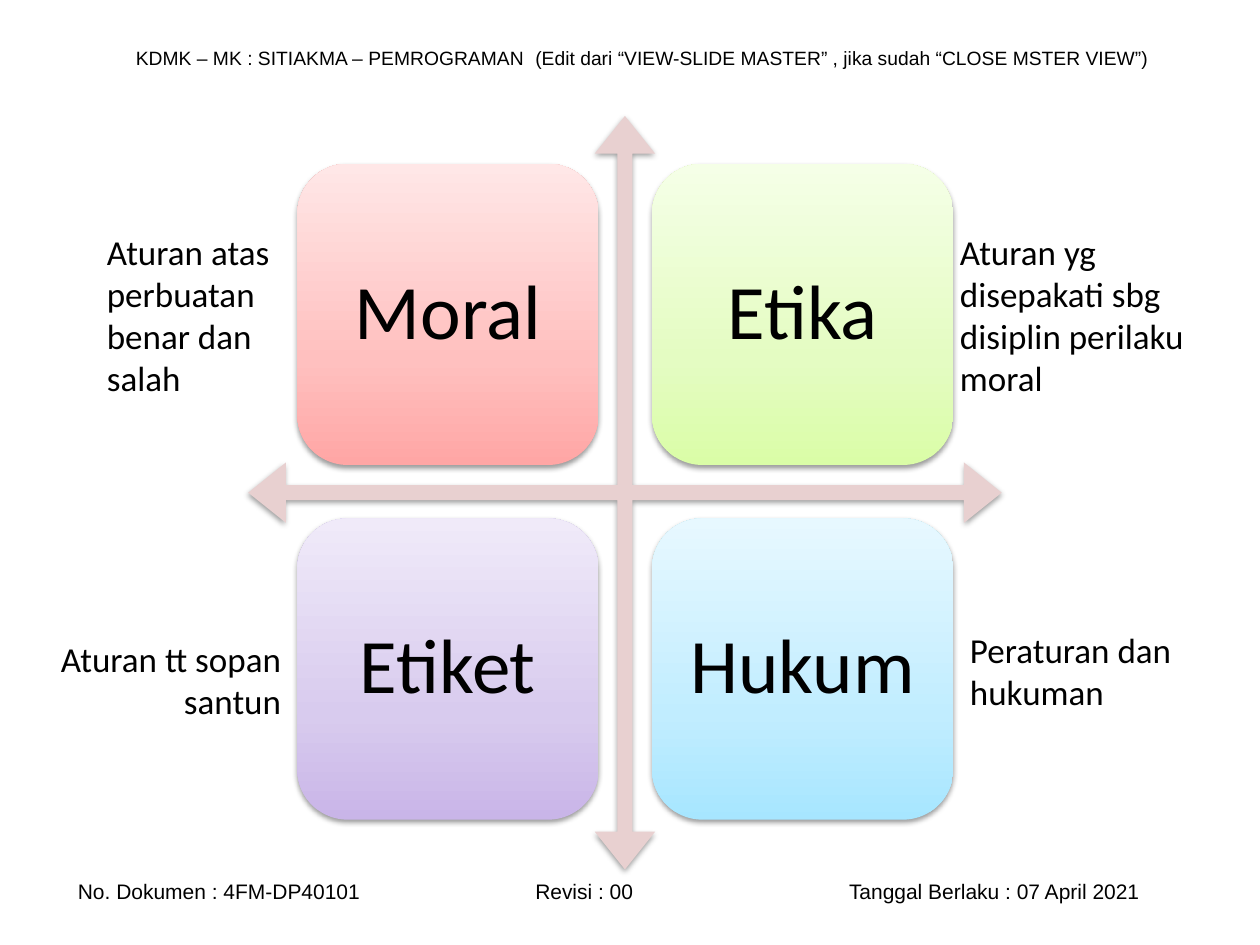
from lxml import etree
from pptx import Presentation
from pptx.dml.color import RGBColor
from pptx.enum.shapes import MSO_SHAPE
from pptx.enum.text import MSO_ANCHOR, PP_ALIGN
from pptx.oxml.ns import qn
from pptx.util import Inches, Pt

QUAD_ARROW, ROUNDED = MSO_SHAPE.QUAD_ARROW, MSO_SHAPE.ROUNDED_RECTANGLE
TOP, MIDDLE = MSO_ANCHOR.TOP, MSO_ANCHOR.MIDDLE
LEFT, CENTER, RIGHT = PP_ALIGN.LEFT, PP_ALIGN.CENTER, PP_ALIGN.RIGHT

BLACK = RGBColor(0x00, 0x00, 0x00)
ARROW_PINK = RGBColor(0xE8, 0xD0, 0xD0)
# Gradient stops of each card, from bottom to top
RED = [RGBColor(0xFF, 0xA6, 0xA5), RGBColor(0xFF, 0xC0, 0xBF), RGBColor(0xFF, 0xE7, 0xE7)]
GREEN = [RGBColor(0xDA, 0xFD, 0xA7), RGBColor(0xE4, 0xFC, 0xC2), RGBColor(0xF5, 0xFF, 0xE7)]
PURPLE = [RGBColor(0xC9, 0xB5, 0xE8), RGBColor(0xD8, 0xCB, 0xEE), RGBColor(0xF0, 0xEA, 0xF9)]
BLUE = [RGBColor(0xA7, 0xE6, 0xFF), RGBColor(0xC1, 0xED, 0xFF), RGBColor(0xE7, 0xF8, 0xFF)]
STOP_POSITIONS = (0, 35, 100)

CARD_SIZE = 2.39
CARD_LEFT, CARD_TOP = 2.36, 1.3
CARD_STEP = 2.815

CARDS = [("Moral", RED), ("Etika", GREEN), ("Etiket", PURPLE), ("Hukum", BLUE)]
NOTES = [
    ("Aturan atas perbuatan benar dan salah", (0.75, 1.78, 1.57, 1.45), LEFT),
    ("Aturan yg disepakati sbg disiplin perilaku moral", (7.52, 1.78, 2.13, 1.45), LEFT),
    ("Aturan tt sopan santun", (0.2, 5.01, 2.13, 0.77), RIGHT),
    ("Peraturan dan hukuman", (7.6, 4.94, 2.13, 0.77), LEFT),
]


def write_text(shape, text, size, font="Calibri", align=LEFT, anchor=TOP, tabs=()):
    frame = shape.text_frame
    frame.word_wrap = True
    frame.vertical_anchor = anchor
    para = frame.paragraphs[0]
    para.alignment = align
    if tabs:
        tab_list = etree.SubElement(para._p.get_or_add_pPr(), qn("a:tabLst"))
        for position in tabs:
            etree.SubElement(tab_list, qn("a:tab"), pos=str(Inches(position)), algn="l")
    para.font.size = Pt(size)
    para.font.name = font
    para.font.color.rgb = BLACK
    para.text = text.replace("\v", "")
    return para


def add_text(page, text, place, size, **text_format):
    box = page.shapes.add_textbox(*map(Inches, place))
    write_text(box, text, size, **text_format)


def add_shadow(shape):
    shape.shadow.inherit = False
    effects = shape._element.spPr.find(qn("a:effectLst"))
    shadow = etree.SubElement(
        effects, qn("a:outerShdw"), blurRad=str(Pt(3.1)), dist=str(Pt(1.6)),
        dir="5400000", rotWithShape="0")
    color = etree.SubElement(shadow, qn("a:srgbClr"), val=str(BLACK))
    etree.SubElement(color, qn("a:alpha"), val="38000")


def add_shadowed_shape(page, kind, place):
    shape = page.shapes.add_shape(kind, *map(Inches, place))
    shape.line.fill.background()
    add_shadow(shape)
    return shape


def fill_gradient(shape, colors):
    shape.fill.gradient()
    shape.fill.gradient_angle = 90
    stops = shape._element.spPr.find(qn("a:gradFill")).find(qn("a:gsLst"))
    for stop in list(stops):
        stops.remove(stop)
    for position, color in zip(STOP_POSITIONS, colors):
        stop = etree.SubElement(stops, qn("a:gs"), pos=str(position * 1000))
        etree.SubElement(stop, qn("a:srgbClr"), val=str(color))


def add_cross_arrow(page):
    arrow = add_shadowed_shape(page, QUAD_ARROW, (1.97, 0.92, 5.98, 5.98))
    arrow.fill.solid()
    arrow.fill.fore_color.rgb = ARROW_PINK
    for index, value in enumerate((0.02, 0.04, 0.05)):
        arrow.adjustments[index] = value


def add_card(page, text, colors, left, top):
    card = add_shadowed_shape(page, ROUNDED, (left, top, CARD_SIZE, CARD_SIZE))
    fill_gradient(card, colors)
    frame = card.text_frame
    frame.margin_left = frame.margin_right = Inches(0.18)
    frame.margin_top = frame.margin_bottom = Inches(0.18)
    para = write_text(card, text, 44, align=CENTER, anchor=MIDDLE)
    para.line_spacing = 0.9


def main():
    deck = Presentation()
    deck.slide_width, deck.slide_height = Inches(10), Inches(7.5)
    page = deck.slides.add_slide(deck.slide_layouts[6])

    # Document header and footer
    add_text(page, "KDMK – MK : SITIAKMA – PEMROGRAMAN\t(Edit dari “VIEW-SLIDE MASTER” , "
             "jika sudah “CLOSE MSTER VIEW”)", (0.98, 0.31, 8.35, 0.29), 11,
             font="Arial", anchor=MIDDLE, tabs=(3.17,))
    add_text(page, "No. Dokumen : 4FM-DP40101\tRevisi : 00\tTanggal Berlaku : 07 April 2021",
             (0.52, 6.92, 9.13, 0.3), 12, font="Arial", anchor=MIDDLE, tabs=(3.63, 6.12))

    # Matrix of four cards around the crossed arrows
    add_cross_arrow(page)
    for index, (text, colors) in enumerate(CARDS):
        row, column = divmod(index, 2)
        add_card(page, text, colors, CARD_LEFT + column * CARD_STEP, CARD_TOP + row * CARD_STEP)

    # Explanation beside each card
    for text, place, align in NOTES:
        add_text(page, text, place, 20, align=align)

    deck.save("out.pptx")


if __name__ == "__main__":
    main()
